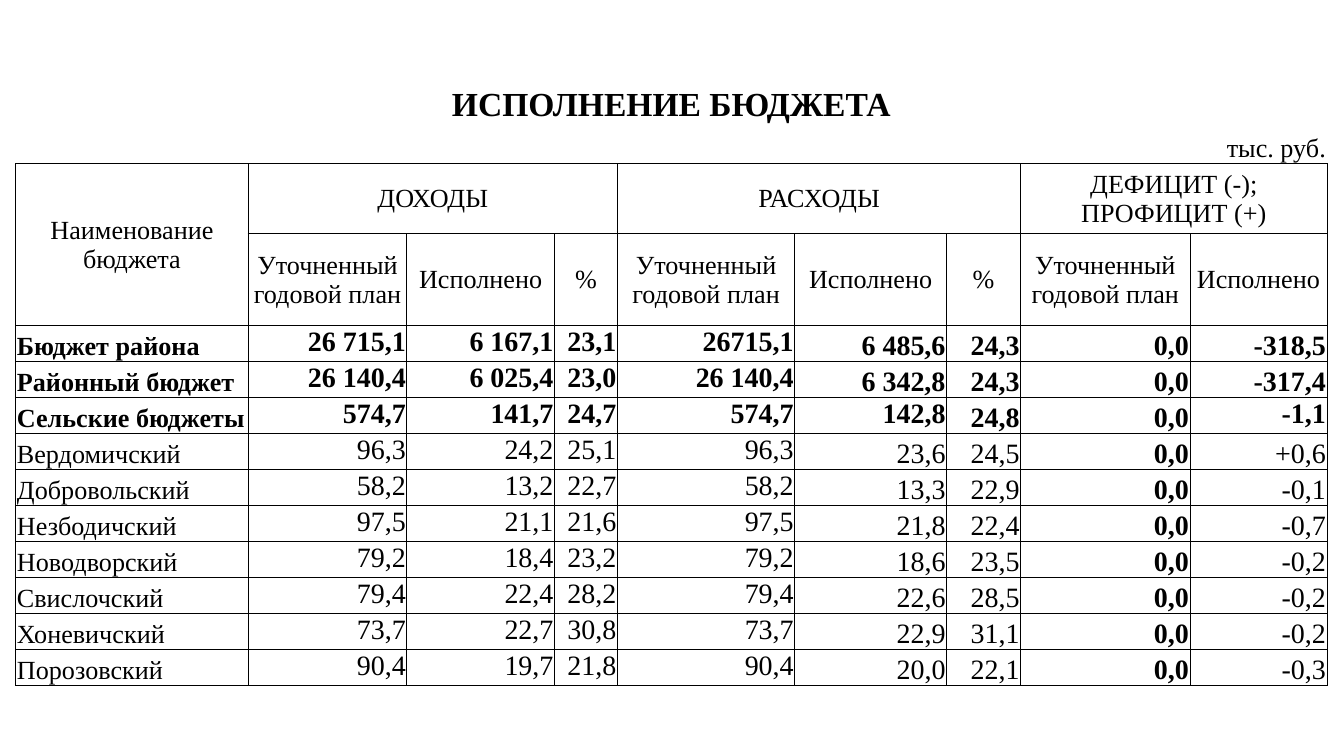
"""Build the budget execution slide with its table of revenues, spending and balance."""
from lxml import etree
from pptx import Presentation
from pptx.dml.color import RGBColor
from pptx.enum.text import MSO_ANCHOR, PP_ALIGN
from pptx.oxml.ns import qn
from pptx.util import Cm, Pt

TOP, MIDDLE, BOTTOM = MSO_ANCHOR.TOP, MSO_ANCHOR.MIDDLE, MSO_ANCHOR.BOTTOM
LEFT, CENTER, RIGHT = PP_ALIGN.LEFT, PP_ALIGN.CENTER, PP_ALIGN.RIGHT
COLORS = {"ink": "000000"}
FONT = "Times New Roman"
PLAIN_STYLE = "{2D5ABB26-0587-4C30-8999-92F81FD0307C}"

COLUMN_WIDTHS = [4.39, 2.57, 0.43, 1.85, 0.94, 1.19, 3.35, 2.29, 0.58, 1.4, 3.2, 0.3, 2.29]
ROW_HEIGHTS = [0.86, 0.68, 1.32, 1.74] + [0.68] * 10
LAST_COLUMN = len(COLUMN_WIDTHS) - 1
FIRST_GRID_ROW, FIRST_DATA_ROW = 2, 4
FIELDS = [(0, 1), (1, 2), (3, 2), (5, 1), (6, 1), (7, 2), (9, 1), (10, 1), (11, 2)]
GROUPS = [(1, 5, "ДОХОДЫ"), (6, 4, "РАСХОДЫ"), (10, 3, "ДЕФИЦИТ (-); ПРОФИЦИТ (+)")]
PLAN, DONE = "Уточненный годовой план", "Исполнено"
HEADINGS = [PLAN, DONE, "%", PLAN, DONE, "%", PLAN, DONE]
BUDGETS = [
    ["Бюджет района", "26 715,1", "6 167,1", "23,1", "26715,1", "6 485,6", "24,3", "0,0", "-318,5"],
    ["Районный бюджет", "26 140,4", "6 025,4", "23,0", "26 140,4", "6 342,8", "24,3", "0,0", "-317,4"],
    ["Сельские бюджеты", "574,7", "141,7", "24,7", "574,7", "142,8", "24,8", "0,0", "-1,1"],
    ["Вердомичский", "96,3", "24,2", "25,1", "96,3", "23,6", "24,5", "0,0", "+0,6"],
    ["Добровольский", "58,2", "13,2", "22,7", "58,2", "13,3", "22,9", "0,0", "-0,1"],
    ["Незбодичский", "97,5", "21,1", "21,6", "97,5", "21,8", "22,4", "0,0", "-0,7"],
    ["Новодворский", "79,2", "18,4", "23,2", "79,2", "18,6", "23,5", "0,0", "-0,2"],
    ["Свислочский", "79,4", "22,4", "28,2", "79,4", "22,6", "28,5", "0,0", "-0,2"],
    ["Хоневичский", "73,7", "22,7", "30,8", "73,7", "22,9", "31,1", "0,0", "-0,2"],
    ["Порозовский", "90,4", "19,7", "21,8", "90,4", "20,0", "22,1", "0,0", "-0,3"],
]
TOTAL_ROWS = 3
VILLAGE_TOTAL = 2
BALANCE_PLAN = 7


def write_cell(cell, text, size=14, bold=False, align=CENTER, anchor=MIDDLE):
    cell.text = text
    cell.vertical_anchor = anchor
    paragraph = cell.text_frame.paragraphs[0]
    paragraph.alignment = align
    paragraph.font.name = FONT
    paragraph.font.size = Pt(size)
    paragraph.font.bold = bold
    paragraph.font.color.rgb = RGBColor.from_string(COLORS["ink"])


def add_borders(cell, sides):
    properties = cell._tc.get_or_add_tcPr()
    for side in sides:
        line = etree.SubElement(properties, qn(f"a:ln{side}"), w=str(Pt(0.5)))
        fill = etree.SubElement(line, qn("a:solidFill"))
        etree.SubElement(fill, qn("a:srgbClr"), val=COLORS["ink"])


presentation = Presentation()
presentation.slide_width, presentation.slide_height = Cm(25.4), Cm(14.28)
slide = presentation.slides.add_slide(presentation.slide_layouts[6])

shape = slide.shapes.add_table(
    len(ROW_HEIGHTS), len(COLUMN_WIDTHS), Cm(0.3), Cm(1.55), Cm(sum(COLUMN_WIDTHS)), Cm(sum(ROW_HEIGHTS))
)
table = shape.table
table.first_row = table.horz_banding = False
table._tbl.tblPr.find(qn("a:tableStyleId")).text = PLAIN_STYLE
for column, width in zip(table.columns, COLUMN_WIDTHS):
    column.width = Cm(width)
for row, height in zip(table.rows, ROW_HEIGHTS):
    row.height = Cm(height)

table.cell(0, 0).merge(table.cell(0, LAST_COLUMN))
for start in (2, 4, 8, 10):
    table.cell(1, start).merge(table.cell(1, start + 1))
table.cell(2, 0).merge(table.cell(3, 0))
for start, span, title in GROUPS:
    table.cell(2, start).merge(table.cell(2, start + span - 1))
for row_index in range(3, len(ROW_HEIGHTS)):
    for start, span in FIELDS:
        if span > 1:
            table.cell(row_index, start).merge(table.cell(row_index, start + span - 1))

for row_index in range(len(ROW_HEIGHTS)):
    for column_index in range(len(COLUMN_WIDTHS)):
        cell = table.cell(row_index, column_index)
        cell.margin_left = cell.margin_right = cell.margin_top = Cm(0.02)
        cell.margin_bottom = 0
        cell.text_frame.paragraphs[0].font.size = Pt(14)
        if row_index == 1:
            add_borders(cell, "B")
        elif row_index >= FIRST_GRID_ROW and not cell.is_spanned:
            add_borders(cell, "LRTB")
        elif row_index >= FIRST_GRID_ROW and column_index == LAST_COLUMN:
            add_borders(cell, "R")
        cell.fill.background()

write_cell(table.cell(0, 0), "ИСПОЛНЕНИЕ БЮДЖЕТА", size=18, bold=True)
write_cell(table.cell(1, LAST_COLUMN), "тыс. руб.", align=RIGHT, anchor=BOTTOM)
write_cell(table.cell(2, 0), "Наименование бюджета")
for start, span, title in GROUPS:
    write_cell(table.cell(2, start), title)
for (start, span), heading in zip(FIELDS[1:], HEADINGS):
    write_cell(table.cell(3, start), heading)

for budget_index, budget in enumerate(BUDGETS):
    is_total = budget_index < TOTAL_ROWS
    top_fields = (1, 2, 3, 4, 5, 8) if budget_index == VILLAGE_TOTAL else (1, 2, 3, 4)
    for field, value in enumerate(budget):
        write_cell(
            table.cell(FIRST_DATA_ROW + budget_index, FIELDS[field][0]),
            value,
            size=15 if field else 14,
            bold=is_total or field == BALANCE_PLAN,
            align=RIGHT if field else LEFT,
            anchor=TOP if field in top_fields else BOTTOM,
        )

presentation.save("out.pptx")
